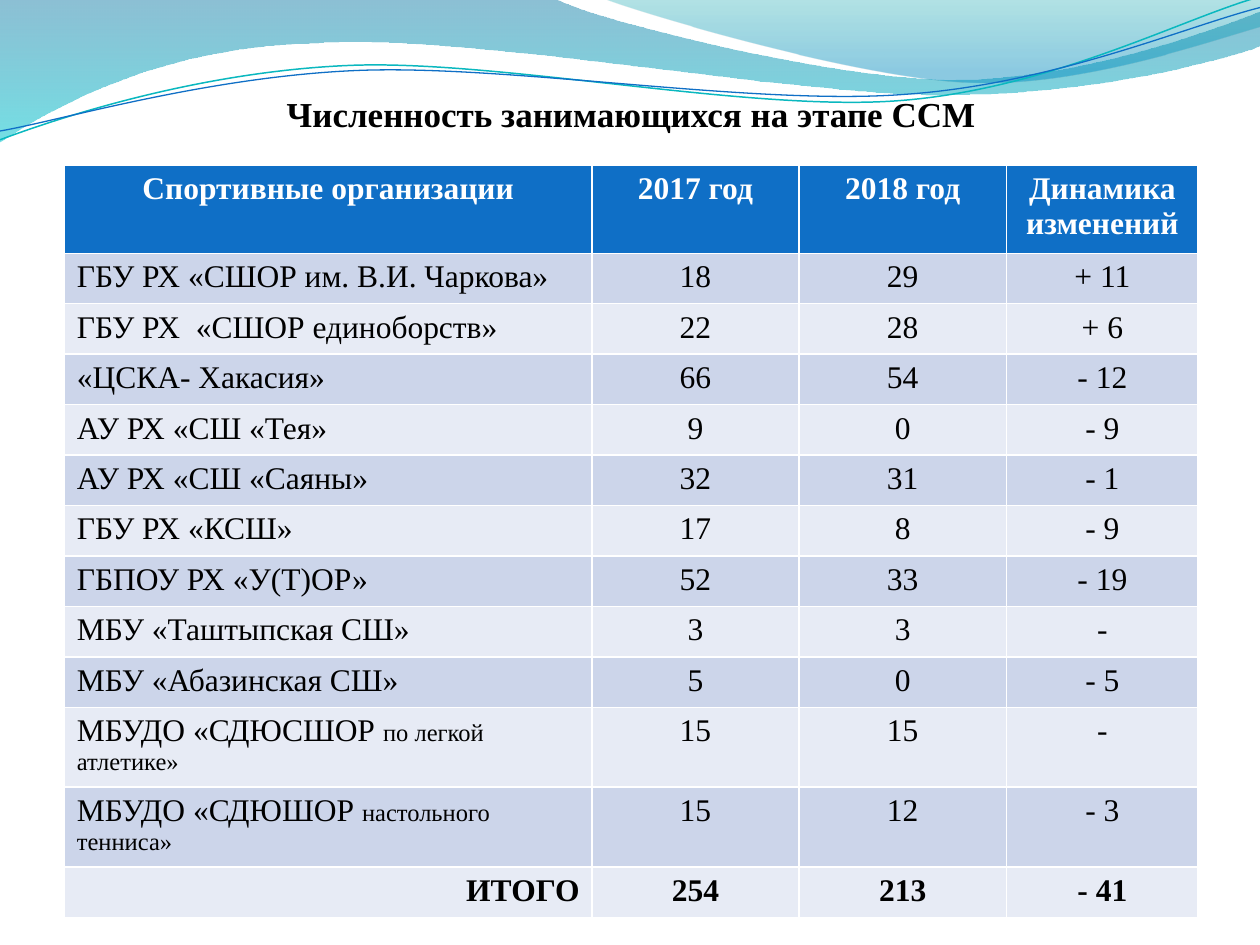
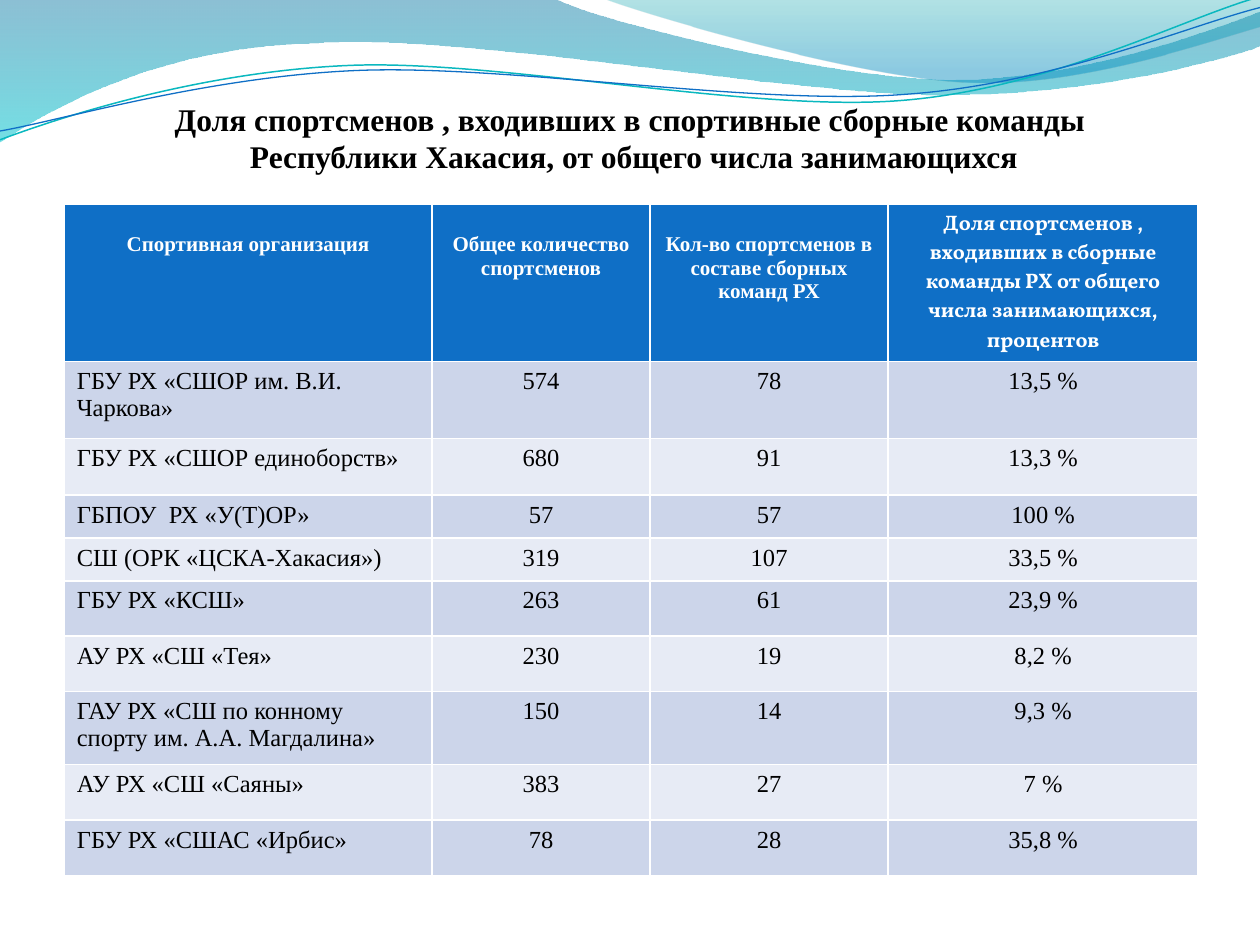
from dataclasses import dataclass

from lxml.etree import SubElement
from pptx import Presentation
from pptx.dml.color import RGBColor
from pptx.enum.text import MSO_ANCHOR as Anchor, PP_ALIGN as Align
from pptx.oxml.ns import qn
from pptx.util import Inches, Pt

# ---- Content ----
STAGE = {
    "title": "Численность занимающихся на этапе ССМ",
    "title_box": (0.51, 0.6, 9, 0.47),
    "title_size": 20,
    "at": (0.51, 1.31),
    "cols": [4.19, 1.64, 1.65, 1.52],
    "heights": [0.67] + [0.4] * 9 + [0.63, 0.6, 0.38],
    "head_size": 18,
    "size": 18,
    "total": True,
    "rows": [
        ("Спортивные организации", "2017 год", "2018 год", "Динамика изменений"),
        ("ГБУ РХ «СШОР им. В.И. Чаркова»", "18", "29", "+ 11"),
        ("ГБУ РХ  «СШОР единоборств»", "22", "28", "+ 6"),
        ("«ЦСКА- Хакасия»", "66", "54", "- 12"),
        ("АУ РХ «СШ «Тея»", "9", "0", "- 9"),
        ("АУ РХ «СШ «Саяны»", "32", "31", "- 1"),
        ("ГБУ РХ «КСШ»", "17", "8", "- 9"),
        ("ГБПОУ РХ «У(Т)ОР»", "52", "33", "- 19"),
        ("МБУ «Таштыпская СШ»", "3", "3", "-"),
        ("МБУ «Абазинская СШ»", "5", "0", "- 5"),
        ("МБУДО «СДЮСШОР |по легкой атлетике»", "15", "15", "-"),
        ("МБУДО «СДЮШОР |настольного тенниса»", "15", "12", "- 3"),
        ("ИТОГО", "254", "213", "- 41"),
    ],
}
SHARE = {
    "title": "Доля спортсменов , входивших в спортивные сборные команды\v"
             " Республики Хакасия, от общего числа занимающихся",
    "title_box": (0.5, 0.77, 9, 0.62),
    "title_size": 18,
    "at": (0.51, 1.62),
    "cols": [2.92, 1.73, 1.89, 2.46],
    "heights": [1.25, 0.61, 0.45, 0.34, 0.34, 0.44, 0.44, 0.58, 0.44, 0.44],
    "head_size": 12,
    "head_drop": 0.18,
    "size": 14,
    "rows": [
        ("Спортивная организация", "Общее количество спортсменов",
         "Кол-во спортсменов в составе сборных команд РХ",
         "Доля спортсменов , входивших в сборные команды РХ "
         "от общего числа занимающихся, процентов"),
        ("ГБУ РХ «СШОР им. В.И. Чаркова»", "574", "78", "13,5 %"),
        ("ГБУ РХ «СШОР единоборств»", "680", "91", "13,3 %"),
        ("ГБПОУ  РХ «У(Т)ОР»", "57", "57", "100 %"),
        ("СШ (ОРК «ЦСКА-Хакасия»)", "319", "107", "33,5 %"),
        ("ГБУ РХ «КСШ»", "263", "61", "23,9 %"),
        ("АУ РХ «СШ «Тея»", "230", "19", "8,2 %"),
        ("ГАУ РХ «СШ по конному спорту им. А.А. Магдалина»", "150", "14", "9,3 %"),
        ("АУ РХ «СШ «Саяны»", "383", "27", "7 %"),
        ("ГБУ РХ «СШАС «Ирбис»", "78", "28", "35,8 %"),
    ],
}

# Each wave: start point, then segments of one point (line) or three (curve).
# Gradient stops are (place, colour, opacity in percent).
WAVES = [
    {"start": (0, 0),
     "segs": [[(4.4, -0.01)],
              [(4.76, 0.17), (6.64, 0.63), (7.58, 0.63)],
              [(8.53, 0.63), (9.58, 0.26), (10, 0.09)],
              [(10.01, 0.36)],
              [(9.83, 0.44), (8.7, 0.76), (7.46, 0.75)],
              [(6.22, 0.75), (3.82, 0.28), (2.57, 0.34)],
              [(1.29, 0.36), (0.46, 0.83), (-0.01, 1.13)],
              [(0, 0)]],
     "stops": [(0, "0074A1", 45), (1, "00C6CF", 55)]},
    {"start": (4.79, -0.01),
     "segs": [[(5.09, 0.11), (6.82, 0.62), (7.69, 0.65)],
              [(8.56, 0.69), (9.61, 0.32), (10, 0.21)],
              [(10, 0)],
              [(4.79, -0.01)]],
     "stops": [(0, "00A1A9", 30), (0.8, "008BBF", 45)]},
    {"start": (0, 1.11),
     "segs": [[(0.48, 0.93), (1.58, 0.57), (2.77, 0.52)],
              [(3.95, 0.47), (5.93, 0.89), (7.13, 0.8)],
              [(8.33, 0.71), (9.38, 0.15), (9.98, -0.02)]],
     "line": ("0AB8BF", 0.85)},
    {"start": (0, 1.04),
     "segs": [[(0.47, 0.96), (1.64, 0.61), (2.83, 0.56)],
              [(4.03, 0.51), (5.97, 0.84), (7.17, 0.75)],
              [(8.36, 0.67), (9.41, 0.21), (10, 0.06)]],
     "line": ("0F6FC6", 0.75)},
]


@dataclass(frozen=True)
class Theme:
    font: str = "Times New Roman"
    accent: str = "Vollkorn"
    ink: str = "000000"
    white: str = "FFFFFF"
    head: str = "0F6FC6"
    bands: tuple = ("E7EBF5", "CCD5EA")
    small: int = 14
    pad: float = 0.05


T = Theme()


def rgb(code):
    return RGBColor.from_string(code)


def write(frame, text, size, font=T.font, color=T.ink, bold=False,
          align=Align.LEFT):
    """Fill the first paragraph; text after a bar is set in the small size."""
    para = frame.paragraphs[0]
    para.alignment = align
    for i, part in enumerate(text.split("|")):
        for j, line in enumerate(part.split("\v")):
            if j:
                para.add_line_break()
            run = para.add_run()
            run.text = line
            run.font.name = font
            run.font.size = Pt(T.small if i else size)
            run.font.bold = bold
            run.font.color.rgb = rgb(color)


def bend(shape, segs):
    """Join each three line steps of a curved segment into one cubic curve."""
    steps = iter(list(shape._element.iter(qn("a:lnTo"))))
    for seg in segs:
        first, *rest = [next(steps) for _ in seg]
        if rest:
            first.tag_name = None
            curve = first.makeelement(qn("a:cubicBezTo"))
            first.addprevious(curve)
            for step in (first, *rest):
                curve.append(step[0])
                step.getparent().remove(step)


def add_wave(slide, wave):
    segs = wave["segs"]
    pen = slide.shapes.build_freeform(*map(Inches, wave["start"]))
    pen.add_line_segments(
        [(Inches(x), Inches(y)) for seg in segs for x, y in seg], close=False)
    shape = pen.convert_to_shape()
    bend(shape, segs)
    shape.shadow.inherit = False
    if "line" in wave:
        color, width = wave["line"]
        shape.fill.background()
        shape.line.color.rgb = rgb(color)
        shape.line.width = Pt(width)
        return
    outline = next(shape._element.iter(qn("a:moveTo"))).getparent()
    SubElement(outline, qn("a:close"))
    shape.line.fill.background()
    shape.fill.gradient()
    shape.fill.gradient_angle = 270
    for stop, (place, color, _) in zip(shape.fill.gradient_stops, wave["stops"]):
        stop.position = place
        stop.color.rgb = rgb(color)
    tints = list(shape._element.spPr.iter(qn("a:srgbClr")))
    for tint, (_, _, alpha) in zip(tints, wave["stops"]):
        SubElement(tint, qn("a:alpha")).set("val", str(alpha * 1000))


def add_title(slide, data):
    box = slide.shapes.add_textbox(*map(Inches, data["title_box"]))
    frame = box.text_frame
    frame.word_wrap = True
    frame.vertical_anchor = Anchor.BOTTOM
    frame.margin_left = frame.margin_right = frame.margin_bottom = 0
    frame.margin_top = Inches(T.pad)
    write(frame, data["title"], data["title_size"], bold=True,
          align=Align.CENTER)


def add_grid(slide, data):
    """Add the table; its default style draws the white rules."""
    rows, cols, tall = data["rows"], data["cols"], data["heights"]
    size = (sum(cols), sum(tall))
    grid = slide.shapes.add_table(
        len(rows), len(cols), *map(Inches, data["at"] + size)).table
    for col, width in zip(grid.columns, cols):
        col.width = Inches(width)
    for row, height in zip(grid.rows, tall):
        row.height = Inches(height)

    drop = data.get("head_drop", 0)
    for r, row in enumerate(rows):
        head = r == 0
        total = data.get("total", False) and r == len(rows) - 1
        for c, text in enumerate(row):
            cell = grid.cell(r, c)
            cell.fill.solid()
            cell.fill.fore_color.rgb = rgb(T.head if head else T.bands[r % 2])
            odd = head and drop and c == len(cols) - 1
            if head and drop and not odd:
                cell.margin_top = Inches(T.pad + drop)
            align = Align.CENTER
            if c == 0 and not head:
                align = Align.RIGHT if total else Align.LEFT
            write(cell.text_frame, text,
                  data["head_size"] if head else data["size"],
                  font=T.accent if odd else T.font,
                  color=T.white if head else T.ink,
                  bold=head or total, align=align)


def main():
    deck = Presentation()
    deck.slide_width, deck.slide_height = Inches(10), Inches(7.5)
    for data in (STAGE, SHARE):
        slide = deck.slides.add_slide(deck.slide_layouts[6])
        for wave in WAVES:
            add_wave(slide, wave)
        add_title(slide, data)
        add_grid(slide, data)
    deck.save("out.pptx")


if __name__ == "__main__":
    main()
